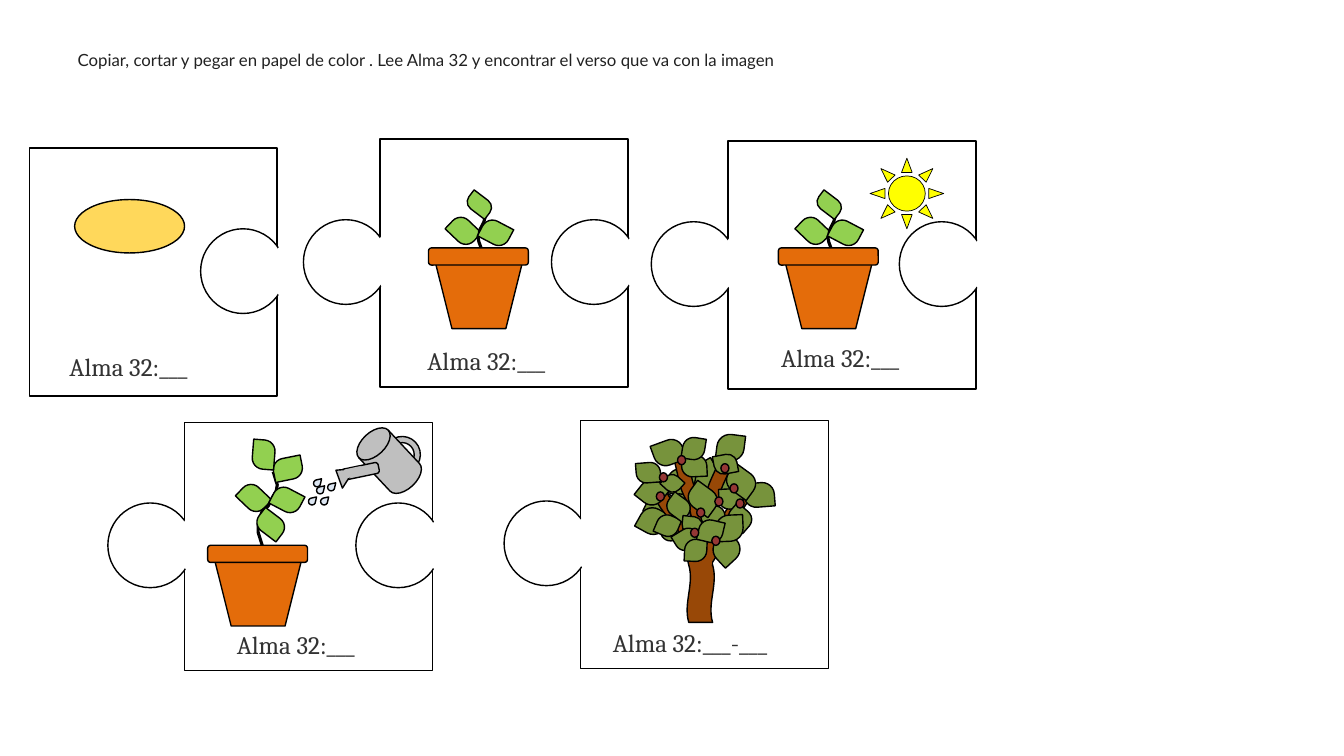
import pptx
import pptx.dml.color
import pptx.enum.shapes
import pptx.enum.text
import pptx.util

SHAPE = pptx.enum.shapes.MSO_SHAPE
Inches = pptx.util.Inches
Pt = pptx.util.Pt
RGB = pptx.dml.color.RGBColor

WHITE = RGB(0xFF, 0xFF, 0xFF)
BLACK = RGB(0x00, 0x00, 0x00)
SEED = RGB(0xFF, 0xD8, 0x5B)
LEAF = RGB(0x92, 0xD0, 0x50)
CLAY = RGB(0xE4, 0x6C, 0x0A)
SUN = RGB(0xFF, 0xFF, 0x00)
METAL = RGB(0xBF, 0xBF, 0xBF)
WATER = RGB(0xDC, 0xE6, 0xF2)
TREE_LEAF = RGB(0x77, 0x93, 0x3C)
BARK = RGB(0x98, 0x48, 0x07)
BERRY = RGB(0x95, 0x37, 0x35)
LABEL = RGB(0x33, 0x33, 0x33)
TITLE = RGB(0x21, 0x21, 0x21)

SIDE, KNOB = 2.46, 0.84

# Leaves: left, top, width, height, rotation, measured from the pot's rim.
SMALL_LEAVES = [(0.2, -0.28, 0.29, 0.22, 43.7), (0.52, -0.26, 0.29, 0.22, 27.8),
                (0.42, -0.56, 0.17, 0.26, 307.3)]
SMALL_STEM = [(0.53, 0.13), (0.54, 0.1), (0.54, 0.05), (0.5, -0.06), (0.49, -0.11),
              (0.5, -0.12), (0.51, -0.18), (0.53, -0.22), (0.55, -0.26),
              (0.56, -0.3), (0.56, -0.34), (0.54, -0.43)]
TALL_LEAVES = [(0.31, -0.58, 0.29, 0.22, 43.7), (0.64, -0.56, 0.29, 0.22, 27.8),
               (0.52, -0.35, 0.21, 0.29, 307.3), (0.65, -0.87, 0.29, 0.22, 348.6),
               (0.41, -1.01, 0.29, 0.22, 274.6)]
TALL_STEM = [(0.53, 0.16), (0.55, 0.11), (0.55, 0.03), (0.5, -0.13), (0.5, -0.21),
             (0.51, -0.24), (0.54, -0.34), (0.6, -0.39), (0.64, -0.47),
             (0.68, -0.54), (0.69, -0.6), (0.65, -0.73)]

BACK_LEAVES = [
    (1.06, 0.72, 0.24, 0.3, 85.5), (0.86, 0.59, 0.27, 0.26, 329.9),
    (0.62, 0.65, 0.27, 0.26, 10.4), (0.63, 0.9, 0.22, 0.22, 15.3),
    (0.42, 0.88, 0.27, 0.26, 26.4), (0.34, 1.04, 0.27, 0.26, 28.9),
    (0.57, 1.14, 0.2, 0.24, 71.7)]
BRANCHES = [
    (0.38, 1.47, 1.14, 0.27, 270), (0.2, 1.01, 0.95, 0.15, 235.5),
    (0.71, 1.17, 0.95, 0.15, 298.7), (0.59, 0.86, 0.95, 0.15, 289.4),
    (0.38, 0.84, 0.95, 0.15, 252.4)]
FRONT_LEAVES = [
    (0.34, 0.76, 0.25, 0.25, 38.2), (1.11, 0.31, 0.27, 0.26, 187.3),
    (0.51, 0.34, 0.24, 0.3, 69.8), (0.58, 0.71, 0.18, 0.17, 42.2),
    (0.33, 0.57, 0.2, 0.24, 85.5), (0.78, 0.5, 0.21, 0.25, 87.1),
    (0.51, 1.11, 0.22, 0.21, 22.8), (0.63, 0.91, 0.2, 0.24, 126.4),
    (0.97, 1, 0.2, 0.24, 87.1), (0.85, 0.8, 0.24, 0.3, 126),
    (0.77, 0.34, 0.22, 0.22, 8.9), (1.15, 0.83, 0.2, 0.24, 87.1),
    (1.41, 0.76, 0.24, 0.3, 85.5), (1.23, 0.63, 0.24, 0.3, 126),
    (1.1, 0.49, 0.19, 0.23, 79.4), (1.24, 1.02, 0.2, 0.24, 130.9),
    (0.78, 1.11, 0.17, 0.2, 276.1), (0.71, 1.23, 0.2, 0.24, 238.6),
    (1.07, 1.32, 0.27, 0.26, 137.2), (1.1, 1.11, 0.27, 0.26, 177.7),
    (0.79, 1.35, 0.22, 0.22, 182.6), (0.93, 1.16, 0.24, 0.22, 193.2)]
BERRIES = [(0.51, 0.88), (1.3, 0.95), (1.24, 0.8), (0.54, 0.69), (0.72, 0.52),
           (1.15, 0.6), (0.91, 1.04), (1.09, 0.93), (0.85, 1.24), (1.06, 1.32)]
DROPS = [(0.14, 0.83), (0.25, 0.8), (0.11, 0.76), (0.06, 0.94), (0.18, 0.94)]


def add(shapes, kind, x, y, w, h, fill, rot=0, line=BLACK, width=1, adj=()):
    """Add a flat preset shape; line=None leaves it without an outline."""
    sp = shapes.add_shape(kind, Inches(x), Inches(y), Inches(w), Inches(h))
    sp.shadow.inherit = False
    sp.rotation = rot
    for i, value in enumerate(adj):
        sp.adjustments[i] = value
    sp.fill.solid()
    sp.fill.fore_color.rgb = fill
    if line is None:
        sp.line.fill.background()
    else:
        sp.line.color.rgb = line
        sp.line.width = Pt(width)
    return sp


def add_leaf(shapes, x, y, leaf, color):
    dx, dy, w, h, rot = leaf
    add(shapes, SHAPE.ROUND_2_DIAG_RECTANGLE, x + dx, y + dy, w, h, color, rot, adj=(0.5, 0))


def style_text(tf, font, size, color):
    r = tf.paragraphs[0].runs[0]
    r.font.name = font
    r.font.size = Pt(size)
    r.font.color.rgb = color


def add_title(s, x, y, w, h):
    sp = add(s.shapes, SHAPE.RECTANGLE, x, y, w, h, WHITE, line=None)
    tf = sp.text_frame
    tf.margin_left = tf.margin_right = tf.margin_top = tf.margin_bottom = 0
    tf.vertical_anchor = pptx.enum.text.MSO_ANCHOR.MIDDLE
    tf.word_wrap = True
    tf.text = ("Copiar, cortar y pegar en papel de color . "
               "Lee Alma 32 y encontrar el verso que va con la imagen")
    tf.paragraphs[0].alignment = pptx.enum.text.PP_ALIGN.LEFT
    style_text(tf, "Lato", 12, TITLE)


def add_piece(s, x, y, left=True, right=True):
    """Add a puzzle piece with its knobs and return the shapes of its group."""
    shapes = s.shapes.add_group_shape().shapes
    add(shapes, SHAPE.RECTANGLE, x, y, SIDE, SIDE, WHITE)
    knobs = []
    if left:
        knobs += [(-0.76, 0.8, BLACK), (-0.06, 0.79, WHITE)]
    if right:
        knobs += [(1.7, 0.8, BLACK), (2.41, 0.8, WHITE)]
    for dx, dy, line in knobs:
        add(shapes, SHAPE.OVAL, x + dx, y + dy, KNOB, KNOB, WHITE, line=line)
    return shapes


def add_label(shapes, x, y, w=1.62, text="Alma 32:___"):
    tf = shapes.add_textbox(Inches(x), Inches(y), Inches(w), Inches(0.4)).text_frame
    tf.word_wrap = False
    tf.auto_size = pptx.enum.text.MSO_AUTO_SIZE.SHAPE_TO_FIT_TEXT
    tf.text = text
    style_text(tf, "Cambria", 18, LABEL)


def add_potted_plant(shapes, x, y, leaves, stem):
    add_leaf(shapes, x, y, leaves[0], LEAF)
    points = [(Inches(x + dx), Inches(y + dy)) for dx, dy in stem]
    builder = shapes.build_freeform(*points[0])
    builder.add_line_segments(points[1:], close=False)
    sp = builder.convert_to_shape()
    sp.shadow.inherit = False
    sp.fill.background()
    sp.line.color.rgb = BLACK
    sp.line.width = Pt(2.25)
    add_leaf(shapes, x, y, leaves[1], LEAF)
    add(shapes, SHAPE.TRAPEZOID, x + 0.04, y + 0.03, 0.92, 0.77, CLAY, 180)
    add(shapes, SHAPE.ROUNDED_RECTANGLE, x, y, 0.99, 0.17, CLAY)
    for leaf in leaves[2:]:
        add_leaf(shapes, x, y, leaf, LEAF)


def add_watering_can(shapes, x, y):
    add(shapes, SHAPE.DONUT, x + 0.81, y + 0.33, 0.36, 0.36, METAL, 316.9, adj=(0.169,))
    add(shapes, SHAPE.FLOWCHART_MAGNETIC_DISK, x + 0.66, y + 0.23, 0.4, 0.68, METAL, 316.9)
    add(shapes, SHAPE.ROUNDED_RECTANGLE, x + 0.52, y + 0.49, 0.11, 0.37, METAL, 258.2,
        adj=(0.258,))
    add(shapes, SHAPE.ISOSCELES_TRIANGLE, x + 0.28, y + 0.63, 0.23, 0.15, METAL, 302.6)
    add(shapes, SHAPE.ROUNDED_RECTANGLE, x + 0.46, y + 0.59, 0.09, 0.19, METAL, 258.2,
        line=None, adj=(0.258,))
    for dx, dy in DROPS:
        add(shapes, SHAPE.TEAR, x + dx, y + dy, 0.07, 0.07, WATER, adj=(1.286,))


def add_tree(shapes, x, y):
    for leaf in BACK_LEAVES:
        add_leaf(shapes, x, y, leaf, TREE_LEAF)
    for dx, dy, w, h, rot in BRANCHES:
        add(shapes, SHAPE.DOUBLE_WAVE, x + dx, y + dy, w, h, BARK, rot)
    add(shapes, SHAPE.OVAL, x + 0.87, y + 1.22, 0.19, 0.67, BARK, line=None)
    for leaf in FRONT_LEAVES:
        add_leaf(shapes, x, y, leaf, TREE_LEAF)
    for dx, dy in BERRIES:
        add(shapes, SHAPE.OVAL, x + dx, y + dy, 0.08, 0.09, BERRY)


def main():
    prs = pptx.Presentation()
    prs.slide_width, prs.slide_height = Inches(13.33), Inches(7.5)
    s = prs.slides.add_slide(prs.slide_layouts[6])

    seed = add_piece(s, 0.29, 1.47, left=False)
    add(seed, SHAPE.OVAL, 0.74, 1.98, 1.09, 0.53, SEED)
    add_label(seed, 0.59, 3.44)

    sprout = add_piece(s, 3.77, 1.38)
    add_potted_plant(sprout, 4.25, 2.46, SMALL_LEAVES, SMALL_STEM)
    add_label(sprout, 4.14, 3.38)

    sunlight = add_piece(s, 7.22, 1.4)
    add(sunlight, SHAPE.SUN, 8.63, 1.57, 0.73, 0.7, SUN, width=0.5)
    add_potted_plant(sunlight, 7.72, 2.46, SMALL_LEAVES, SMALL_STEM)
    add_label(sunlight, 7.65, 3.35)

    watering = add_piece(s, 1.83, 4.19)
    add_watering_can(watering, 3, 4)
    add_potted_plant(watering, 2.06, 5.41, TALL_LEAVES, TALL_STEM)
    add_label(watering, 2.25, 6.19)

    tree = add_piece(s, 5.76, 4.17, right=False)
    add_tree(tree, 6, 4)
    add_label(tree, 5.98, 6.17, 2.12, "Alma 32:___-___")

    add_title(s, 0.77, 0.49, 8.65, 0.2)
    prs.save("out.pptx")


if __name__ == "__main__":
    main()
